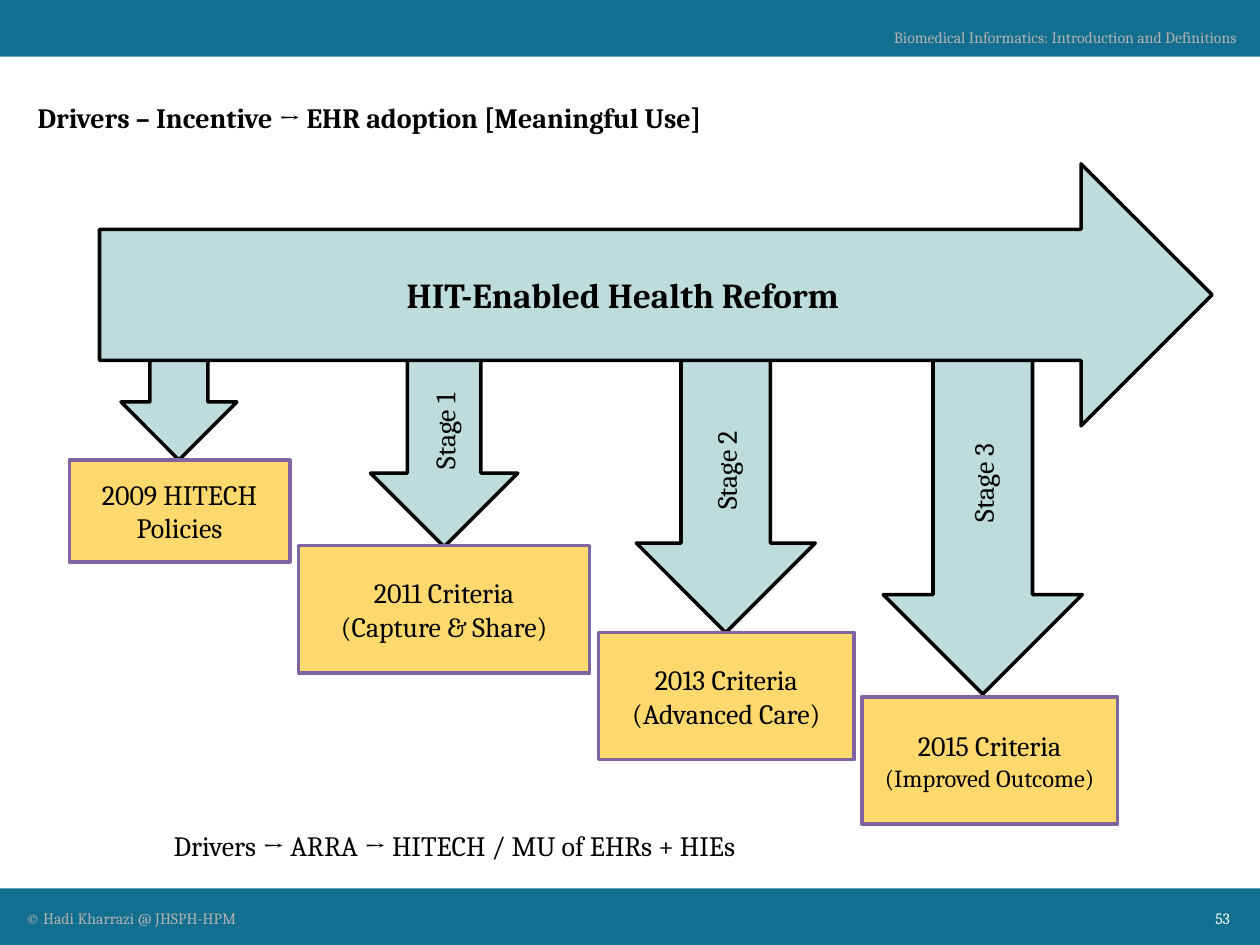
from pptx import Presentation
from pptx.dml.color import RGBColor
from pptx.enum.shapes import MSO_SHAPE
from pptx.enum.text import MSO_ANCHOR, PP_ALIGN
from pptx.util import Inches, Pt

RECT, DOWN, RIGHT = MSO_SHAPE.RECTANGLE, MSO_SHAPE.DOWN_ARROW, MSO_SHAPE.RIGHT_ARROW
MID, TOP = MSO_ANCHOR.MIDDLE, MSO_ANCHOR.TOP
LEFT, MIDST, END = PP_ALIGN.LEFT, PP_ALIGN.CENTER, PP_ALIGN.RIGHT

TEAL = RGBColor(0x12, 0x6F, 0x90)
PALE = RGBColor(0xBE, 0xDC, 0xDC)
GOLD = RGBColor(0xFF, 0xD9, 0x6D)
PLUM = RGBColor(0x80, 0x64, 0xA2)
GREY = RGBColor(0xB2, 0xB2, 0xB2)
BLACK = RGBColor(0, 0, 0)
WHITE = RGBColor(0xFF, 0xFF, 0xFF)

WIDE, HIGH, BAR = 10, 7.5, 0.45
BODY = {"name": "Cambria", "size": Pt(16), "bold": False}
HEAD = {**BODY, "bold": True}
BANNER = {**HEAD, "size": Pt(20)}
SMALL = {**BODY, "size": Pt(14)}
NOTE = {**BODY, "size": Pt(9)}

# Each step: arrow box, arrow label, criteria box, lines with their formats
STEPS = [
    ((0.96, 2.44, 0.92, 1.21), "", (0.55, 3.65, 1.75, 0.81),
     [("2009 HITECH Policies", BODY)]),
    ((2.94, 2.8, 1.17, 1.54), "Stage 1", (2.37, 4.33, 2.31, 1.01),
     [("2011 Criteria", BODY), ("(Capture & Share)", BODY)]),
    ((5.05, 2.8, 1.42, 2.22), "Stage 2", (4.75, 5.02, 2.03, 1.01),
     [("2013 Criteria", BODY), ("(Advanced Care)", BODY)]),
    ((7.01, 2.55, 1.58, 2.96), "Stage 3", (6.84, 5.53, 2.03, 1.01),
     [("2015 Criteria", BODY), ("(Improved Outcome)", SMALL)]),
]


def write(shape, lines, color=BLACK, align=MIDST, anchor=MID, wrap=True):
    """Write lines of (text, format) as one paragraph with line breaks."""
    frame = shape.text_frame
    frame.word_wrap, frame.vertical_anchor = wrap, anchor
    para = frame.paragraphs[0]
    para.alignment = align
    for i, (text, form) in enumerate(lines):
        if i:
            para.add_line_break()
        run = para.add_run()
        run.text = text
        for key, value in form.items():
            setattr(run.font, key, value)
        run.font.color.rgb = color


def draw(slide, kind, box, fill, edge=None):
    """Add a filled shape, outlined if an edge colour is given."""
    shape = slide.shapes.add_shape(kind, *map(Inches, box))
    shape.shadow.inherit = False
    shape.fill.solid()
    shape.fill.fore_color.rgb = fill
    if edge is None:
        shape.line.fill.background()
    else:
        shape.line.color.rgb = edge
        shape.line.width = Pt(2)
    return shape


def label(slide, box, text, form, **style):
    area = slide.shapes.add_textbox(*map(Inches, box))
    write(area, [(text, form)], **style)


def header(slide, box):
    left, top, width, _ = box
    draw(slide, RECT, box, TEAL)
    label(slide, (left + width - 3.28, top + 0.17, 3.19, 0.25),
          "Biomedical Informatics: Introduction and Definitions", NOTE,
          color=GREY, align=END, anchor=TOP, wrap=False)


def footer(slide, box):
    left, top, width, _ = box
    draw(slide, RECT, box, TEAL)
    label(slide, (left + 0.11, top + 0.11, 6.21, 0.25),
          "© Hadi Kharrazi @ JHSPH-HPM", NOTE,
          color=GREY, align=LEFT, anchor=TOP)
    label(slide, (left + width - 0.79, top + 0.11, 0.65, 0.25), "53", NOTE,
          color=WHITE, align=END, anchor=TOP)


def step(slide, box, name, card, lines):
    """Down arrow with its upright label, and the criteria box below."""
    arrow = draw(slide, DOWN, box, PALE, BLACK)
    if name:
        write(arrow, [(name, BODY)])
        arrow.text_frame._txBody.bodyPr.set("vert", "vert270")
    write(draw(slide, RECT, card, GOLD, PLUM), lines)


def reform(slide, box):
    """Wide arrow that covers the tops of the stage arrows."""
    write(draw(slide, RIGHT, box, PALE, BLACK),
          [("HIT-Enabled Health Reform", BANNER)])


def main():
    deck = Presentation()
    deck.slide_width, deck.slide_height = Inches(WIDE), Inches(HIGH)
    slide = deck.slides.add_slide(deck.slide_layouts[6])

    # Bars, title and summary
    header(slide, (0, 0, WIDE, BAR))
    footer(slide, (0, HIGH - BAR, WIDE, BAR))
    label(slide, (0.2, 0.7, 9.61, 0.46),
          "Drivers – Incentive → EHR adoption [Meaningful Use]", HEAD, align=LEFT)
    label(slide, (1.28, 6.53, 5.5, 0.42),
          "Drivers → ARRA → HITECH / MU of EHRs + HIEs", BODY,
          align=LEFT, anchor=TOP)

    # Diagram
    for parts in STEPS:
        step(slide, *parts)
    reform(slide, (0.79, 1.3, 8.83, 2.08))

    deck.save("out.pptx")


if __name__ == "__main__":
    main()
